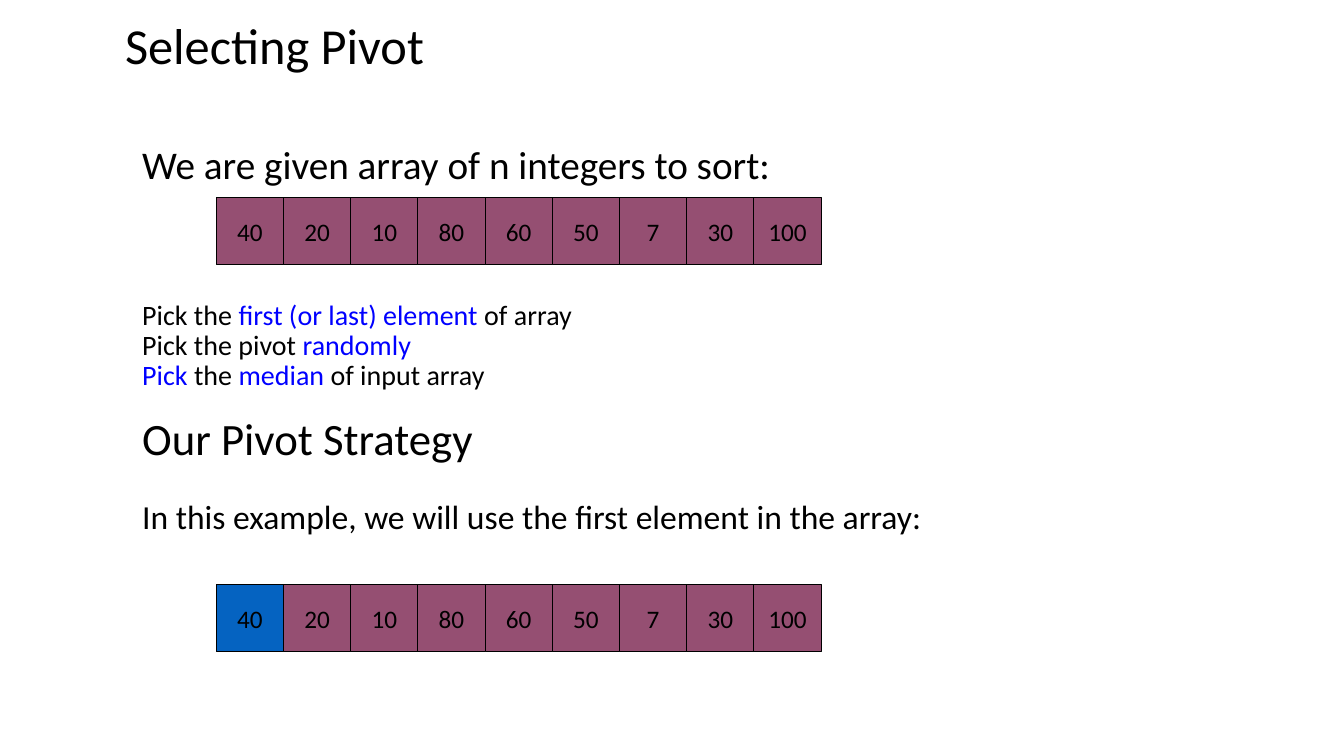
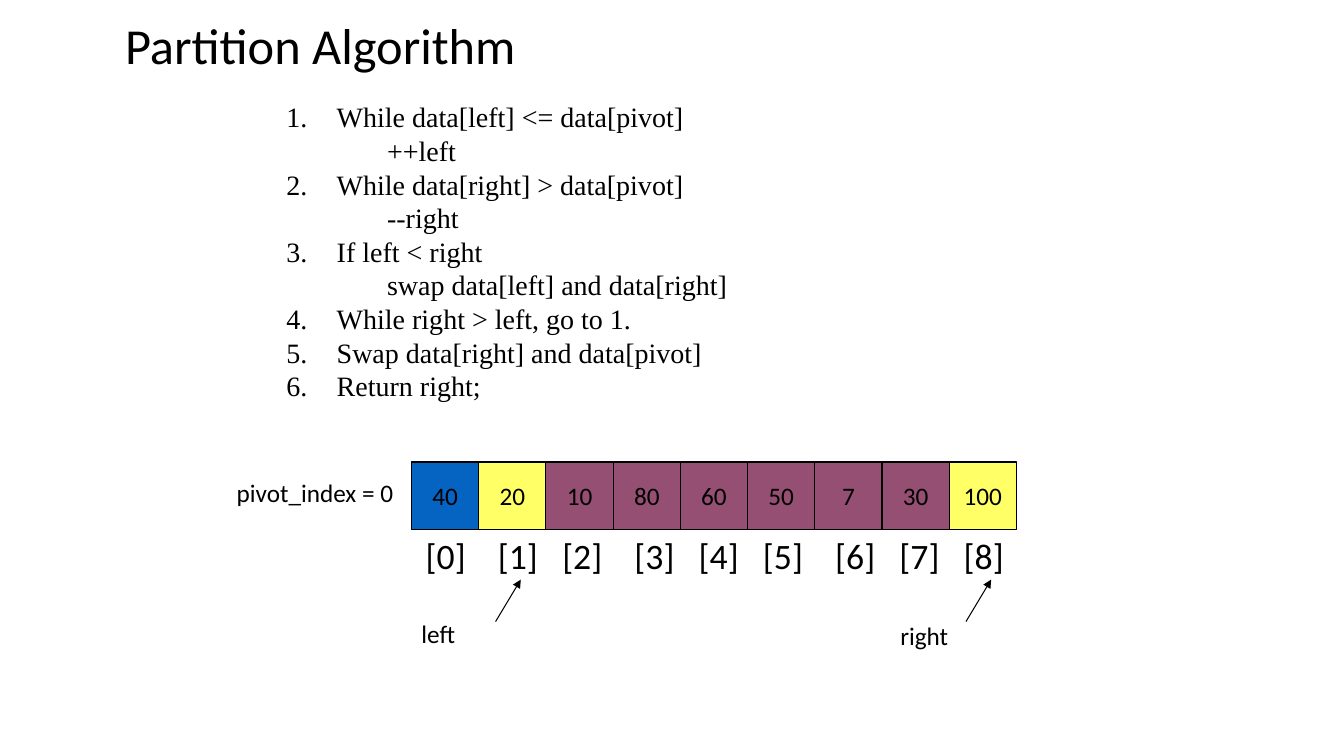
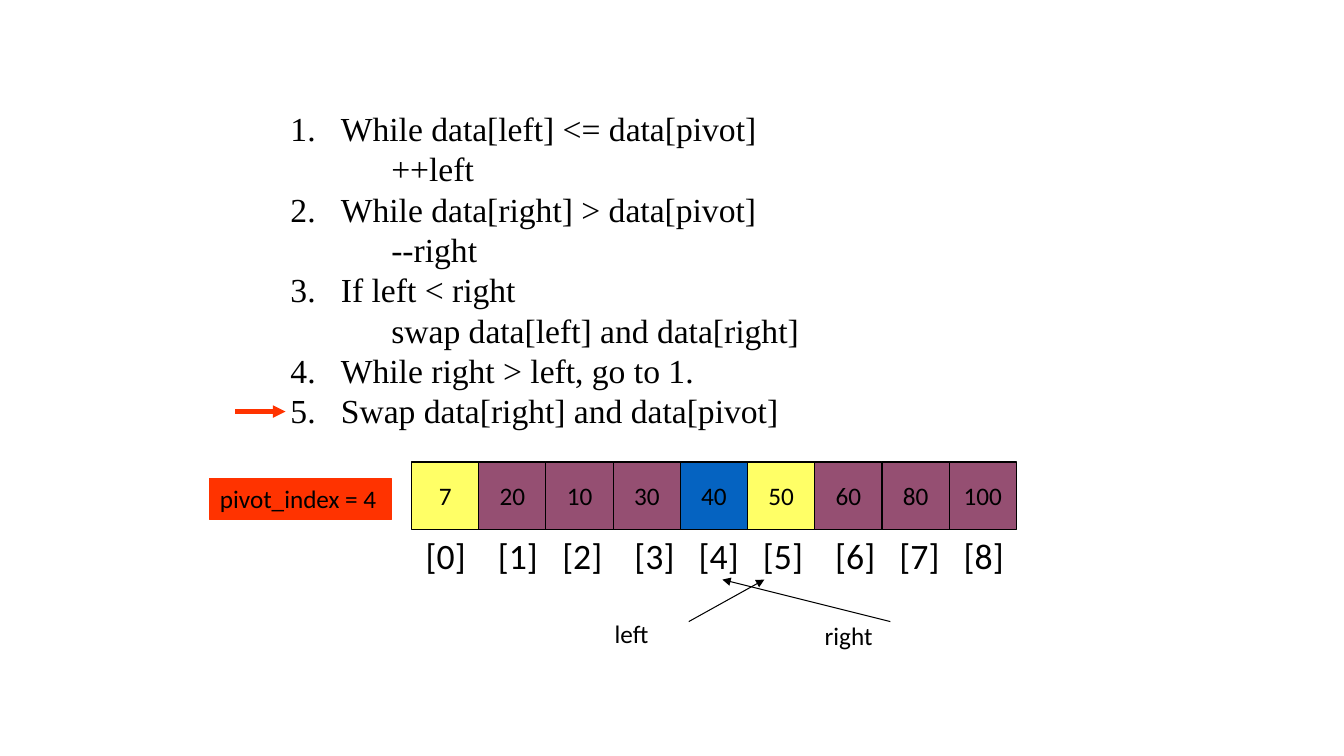
from dataclasses import dataclass
from itertools import accumulate

from lxml.etree import SubElement
from pptx import Presentation
from pptx.dml.color import RGBColor as Rgb
from pptx.enum.shapes import MSO_CONNECTOR as Connector
from pptx.enum.shapes import MSO_SHAPE as Shape
from pptx.enum.text import MSO_ANCHOR as Anchor
from pptx.enum.text import PP_ALIGN as Align
from pptx.oxml.ns import qn
from pptx.util import Inches, Pt


@dataclass(frozen=True)
class Theme:
    black: str = "000000"
    accent: str = "0000FF"
    element: str = "954F72"
    pivot: str = "0563C1"
    marked: str = "FFFF66"
    alert: str = "FF3300"
    sans: str = "Calibri"
    serif: str = "Times New Roman"
    title: float = 36
    heading: float = 32
    lead: float = 28
    index: float = 25.5
    body: float = 24
    note: float = 20
    label: float = 18
    tight: float = 0.9


THEME = Theme()
COLUMNS, ROWS, PER_INCH = 160, 90, 12
CELL = 8
MARGIN, TEXT_WIDTH = 15.75, 102
TRACE_LEFT, TRACE_TOP = 49, 55
POINTER_TIP, POINTER_END = 69, 74

NUMBERS = [40, 20, 10, 80, 60, 50, 7, 30, 100]
PARTITIONED = [7, 20, 10, 30, 40, 50, 60, 80, 100]
STEPS = [
    (0, "While data[left] <= data[pivot]"),
    (1, "++left"),
    (0, "While data[right] > data[pivot]"),
    (1, "--right"),
    (0, "If left < right"),
    (1, "swap data[left] and data[right]"),
    (0, "While right > left, go to 1."),
    (0, "Swap data[right] and data[pivot]"),
    (0, "Return right;"),
]
PICKS = [
    [("Pick the ", False), ("first (or last) element", True), (" of array", False)],
    [("Pick the pivot ", False), ("randomly", True)],
    [("Pick", True), (" the ", False), ("median", True), (" of input array", False)],
]


def grid(units):
    return Inches(units / PER_INCH)


def color(value):
    return Rgb.from_string(value)


def style_span(span, size, font=THEME.sans, ink=THEME.black):
    span.font.size = Pt(size)
    span.font.name = font
    span.font.color.rgb = color(ink)


def style_frame(frame, size, font=THEME.sans):
    for para in frame.paragraphs:
        for span in para.runs:
            style_span(span, size, font)


def add_text(page, at, text, size, spacing=None, anchor=Anchor.TOP, font=THEME.sans):
    box = page.shapes.add_textbox(*map(grid, at))
    frame = box.text_frame
    frame.word_wrap = True
    frame.vertical_anchor = anchor
    frame.text = text
    for para in frame.paragraphs:
        para.line_spacing = spacing
    style_frame(frame, size, font)
    return frame


def add_title(page, text):
    add_text(page, (13.7, 1.4, 133.3, 8.6), text, THEME.title, THEME.tight, Anchor.MIDDLE)


def add_block(page, at, text, fill, line, align, anchor):
    block = page.shapes.add_shape(Shape.RECTANGLE, *map(grid, at))
    block.shadow.inherit = False
    block.fill.solid()
    block.fill.fore_color.rgb = color(fill)
    block.line.color.rgb = color(line)
    block.line.width = Pt(0.75)
    frame = block.text_frame
    frame.word_wrap = False
    frame.vertical_anchor = anchor
    frame.text = text
    frame.paragraphs[0].alignment = align
    style_frame(frame, THEME.label)


def add_array(page, left, top, values, marks):
    for position, value in enumerate(values):
        at = (left + position * CELL, top, CELL, CELL)
        fill = marks.get(position, THEME.element)
        add_block(page, at, str(value), fill, THEME.black, Align.CENTER, Anchor.MIDDLE)


def add_indexes(page):
    text = "\t".join(f"[{position}]" for position in range(len(NUMBERS)))
    frame = add_text(page, (49.5, 63, 75, 6.4), text, THEME.index)
    tabs = SubElement(frame.paragraphs[0]._p.get_or_add_pPr(), qn("a:tabLst"))
    narrow, wide = 7.65, 8.6
    for stop in accumulate([wide, narrow, wide, narrow, narrow, wide, narrow, narrow]):
        SubElement(tabs, qn("a:tab"), pos=str(grid(stop)), algn="l")


def add_steps(page, at, steps, size):
    text = "\n".join(words for level, words in steps)
    frame = add_text(page, at, text, size, font=THEME.serif)
    for para, (level, words) in zip(frame.paragraphs, steps):
        para.level = level
        properties = para._p.get_or_add_pPr()
        properties.set("marL", str(Inches(0.5 * (level + 1))))
        properties.set("indent", str(0 if level else Inches(-0.5)))
        if level:
            SubElement(properties, qn("a:buNone"))
        else:
            SubElement(properties, qn("a:buFont"), typeface="+mj-lt")
            SubElement(properties, qn("a:buAutoNum"), type="arabicPeriod")


def add_arrow(page, start, end, ink=THEME.black, width=0.75):
    arrow = page.shapes.add_connector(Connector.STRAIGHT, *map(grid, start + end))
    arrow.line.color.rgb = color(ink)
    arrow.line.width = Pt(width)
    SubElement(arrow.line._get_or_add_ln(), qn("a:tailEnd"), type="triangle")
    SubElement(arrow._element.spPr, qn("a:effectLst"))


def add_pointer(page, name, label_at, start, tip):
    add_text(page, (*label_at, 30, 4.8), name, THEME.label)
    add_arrow(page, (start, POINTER_END), (tip, POINTER_TIP))


def add_trace(page, values, marks):
    add_array(page, TRACE_LEFT, TRACE_TOP, values, marks)
    add_indexes(page)


def add_strategies(page):
    at = (MARGIN, 38.15, TEXT_WIDTH, 15)
    frame = add_text(page, at, "", THEME.note, anchor=Anchor.MIDDLE)
    for position, pick in enumerate(PICKS):
        para = frame.add_paragraph() if position else frame.paragraphs[0]
        para.line_spacing = THEME.tight
        for words, stressed in pick:
            span = para.add_run()
            span.text = words
            style_span(span, THEME.note, ink=THEME.accent if stressed else THEME.black)
    heading = frame.add_paragraph()
    heading.text = "Our Pivot Strategy"
    heading.line_spacing = THEME.tight
    heading.space_before = Pt(18)
    style_span(heading.runs[0], THEME.heading)


def build_pivot_page(page):
    add_title(page, "Selecting Pivot")
    add_text(page, (MARGIN, 16.7, TEXT_WIDTH, 6.5),
             "We are given array of n integers to sort:", THEME.lead, THEME.tight)
    add_array(page, 25.75, 23.5, NUMBERS, {})
    add_strategies(page)
    add_text(page, (MARGIN, 59, TEXT_WIDTH, 10),
             "In this example, we will use the first element in the array:",
             THEME.body, THEME.tight)
    add_array(page, 25.75, 69.6, NUMBERS, {0: THEME.pivot})


def build_algorithm_page(page):
    add_title(page, "Partition Algorithm")
    add_steps(page, (32.9, 11.3, 56, 38), STEPS, THEME.note)
    add_trace(page, NUMBERS, {0: THEME.pivot, 1: THEME.marked, 8: THEME.marked})
    add_text(page, (27, 56.2, 22, 4.8), "pivot_index = 0", THEME.label)
    add_pointer(page, "left", (49, 73), 59, 62)
    add_pointer(page, "right", (106, 73.2), 115, 118)


def build_swap_page(page):
    add_steps(page, (33.4, 12.25, 64, 40), STEPS[:-1], THEME.body)
    add_trace(page, PARTITIONED, {0: THEME.marked, 4: THEME.pivot, 5: THEME.marked})
    add_block(page, (25, 57, 21.6, 4.9), "pivot_index = 4",
              THEME.alert, THEME.alert, Align.LEFT, Anchor.TOP)
    add_pointer(page, "left", (72, 73), 82, 91)
    add_pointer(page, "right", (97, 73.2), 106, 86)
    add_arrow(page, (28, 49), (34, 49), THEME.alert, 3)


def main():
    deck = Presentation()
    deck.slide_width, deck.slide_height = grid(COLUMNS), grid(ROWS)
    for build in (build_pivot_page, build_algorithm_page, build_swap_page):
        build(deck.slides.add_slide(deck.slide_layouts[6]))
    deck.save("out.pptx")


if __name__ == "__main__":
    main()
